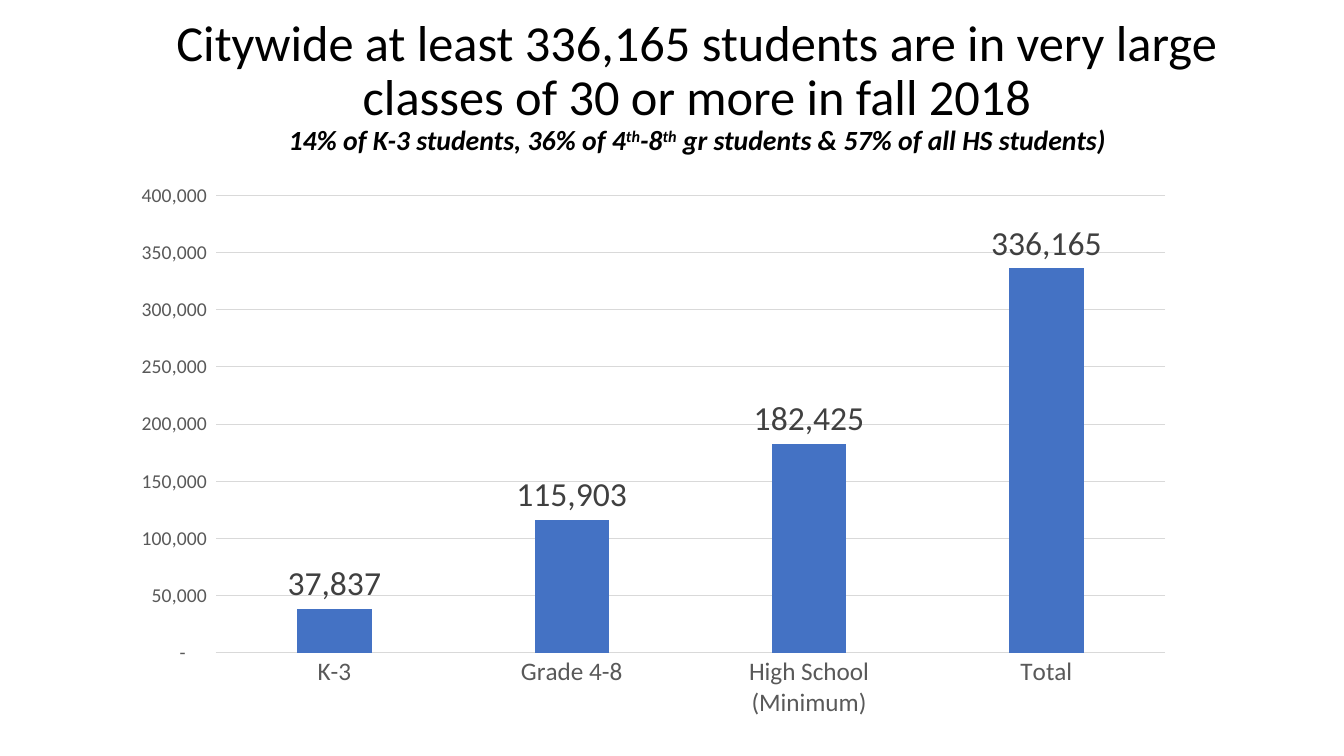
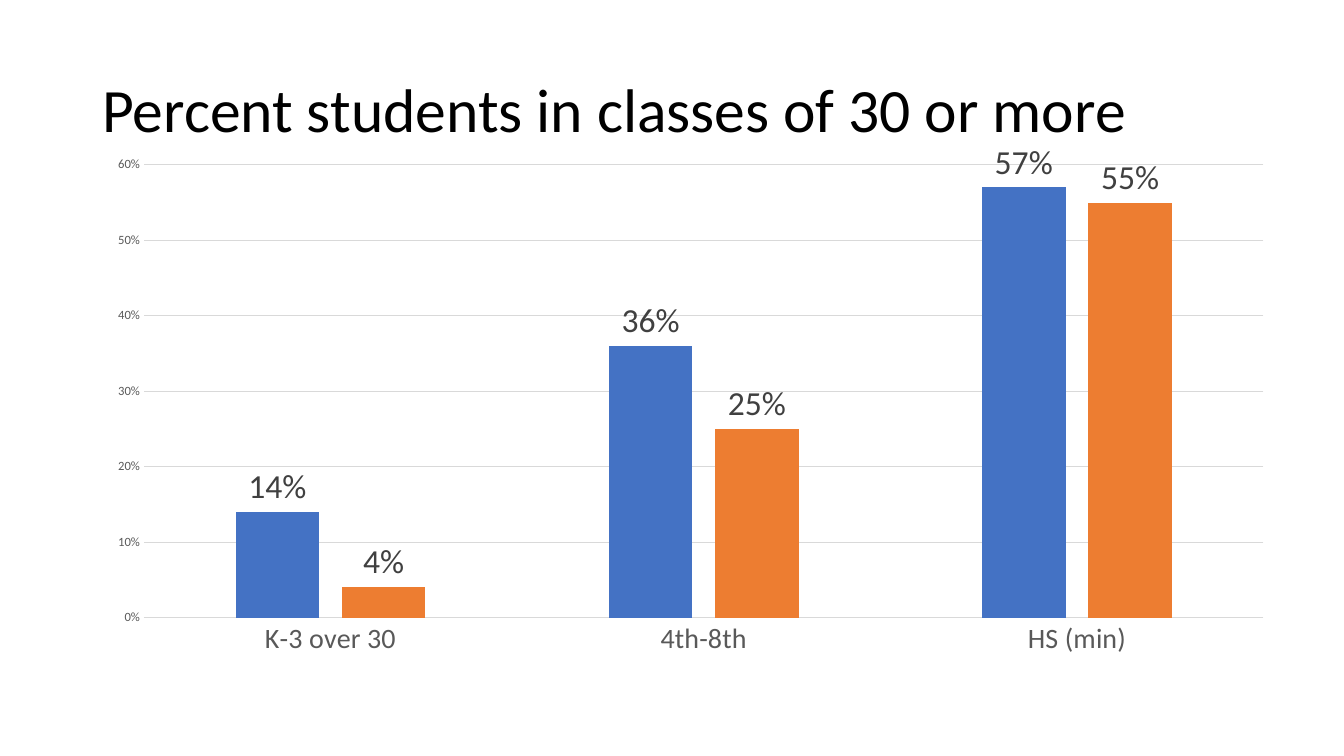
"""Build two slides of column charts about students in large classes."""
from dataclasses import dataclass

from lxml import etree
from pptx import Presentation
from pptx import util as u
from pptx.chart.data import CategoryChartData
from pptx.dml.color import RGBColor
from pptx.enum import chart as ch
from pptx.enum import text
from pptx.oxml.ns import qn

PX = 9525
FONT = "Calibri"
COLORS = {
    "title": "000000",
    "axis": "595959",
    "label": "404040",
    "grid": "D9D9D9",
    "blue": "4472C4",
    "orange": "ED7D31",
}
COUNT = '_(* #,##0_);_(* \\(#,##0\\);_(* "-"??_);_('
PERCENT = "0%"
LABEL_SIZE = 24


@dataclass(frozen=True)
class Box:
    left: int
    top: int
    width: int
    height: int

    def emu(self) -> tuple[int, ...]:
        return tuple(n * PX for n in (self.left, self.top, self.width, self.height))


@dataclass(frozen=True)
class Span:
    text: str
    size: float
    strong: bool = False
    raised: bool = False


@dataclass(frozen=True)
class Title:
    box: Box
    align: text.PP_ALIGN
    lines: list[list[Span]]


@dataclass(frozen=True)
class Series:
    color: str
    values: list[float]


@dataclass(frozen=True)
class Columns:
    box: Box
    plot: tuple[float, float, float, float]
    categories: list[str]
    series: list[Series]
    number_format: str
    top_value: float
    step: float
    category_size: int
    value_size: int


def rgb(name: str) -> RGBColor:
    return RGBColor.from_string(COLORS[name])


def style_font(font, size: float, color: str) -> None:
    font.name = FONT
    font.size = u.Pt(size)
    font.color.rgb = rgb(color)


def style_line(line) -> None:
    line.color.rgb = rgb("grid")
    line.width = u.Pt(0.75)


def add_title(page, title: Title) -> None:
    frame = page.shapes.add_textbox(*title.box.emu()).text_frame
    frame.word_wrap = True
    frame.vertical_anchor = text.MSO_ANCHOR.MIDDLE
    para = frame.paragraphs[0]
    para.alignment = title.align
    para.line_spacing = 0.9
    for number, line in enumerate(title.lines):
        if number:
            para.add_line_break()
        for span in line:
            run = para.add_run()
            run.text = span.text
            style_font(run.font, span.size, "title")
            run.font.bold = run.font.italic = span.strong
            if span.raised:
                run._r.get_or_add_rPr().set("baseline", "30000")


def place_plot(chart, fractions: tuple[float, float, float, float]) -> None:
    area = chart._chartSpace.chart.plotArea
    for old in area.findall(qn("c:layout")):
        area.remove(old)
    layout = etree.Element(qn("c:layout"))
    manual = etree.SubElement(layout, qn("c:manualLayout"))
    settings = [("layoutTarget", "inner"), ("xMode", "edge"), ("yMode", "edge")]
    settings += zip("xywh", map(str, fractions))
    for tag, value in settings:
        etree.SubElement(manual, qn(f"c:{tag}")).set("val", value)
    area.insert(0, layout)


def add_columns(page, columns: Columns) -> None:
    data = CategoryChartData(number_format=columns.number_format)
    data.categories = columns.categories
    for series in columns.series:
        data.add_series("", series.values)
    chart = page.shapes.add_chart(
        ch.XL_CHART_TYPE.COLUMN_CLUSTERED, *columns.box.emu(), data
    ).chart
    chart.has_title = False
    chart.has_legend = False
    style_font(chart.font, 10, "title")
    place_plot(chart, columns.plot)

    categories, values = chart.category_axis, chart.value_axis
    for axis, size in (
        (categories, columns.category_size),
        (values, columns.value_size),
    ):
        axis.major_tick_mark = axis.minor_tick_mark = ch.XL_TICK_MARK.NONE
        style_font(axis.tick_labels.font, size, "axis")
    style_line(categories.format.line)
    values.format.line.fill.background()
    values.has_major_gridlines = True
    style_line(values.major_gridlines.format.line)
    values.minimum_scale = 0
    values.maximum_scale = columns.top_value
    values.major_unit = columns.step
    values.tick_labels.number_format = columns.number_format
    values.tick_labels.number_format_is_linked = False

    plot = chart.plots[0]
    plot.vary_by_categories = False
    plot.gap_width = 219
    plot.overlap = -27
    for bars, series in zip(plot.series, columns.series):
        bars.format.fill.solid()
        bars.format.fill.fore_color.rgb = rgb(series.color)
        labels = bars.data_labels
        labels.show_value = True
        labels.position = ch.XL_LABEL_POSITION.OUTSIDE_END
        labels.number_format = columns.number_format
        labels.number_format_is_linked = False
        style_font(labels.font, LABEL_SIZE, "label")


SLIDES = [
    (
        Title(
            Box(112, 8, 1104, 150),
            text.PP_ALIGN.CENTER,
            [
                [Span("Citywide at least 336,165 students are in very large "
                      "classes of 30 or more in fall 2018", 36)],
                [
                    Span("14% of K-3 students, 36% of 4", 19.8, True),
                    Span("th", 19.8, True, True),
                    Span("-8", 19.8, True),
                    Span("th", 19.8, True, True),
                    Span(" gr students & 57% of all HS students)", 19.8, True),
                ],
            ],
        ),
        Columns(
            box=Box(114, 165, 1016, 531),
            plot=(0.09, 0.04, 0.89, 0.82),
            categories=["K-3", "Grade 4-8", "High School (Minimum)", "Total"],
            series=[Series("blue", [37837, 115903, 182425, 336165])],
            number_format=COUNT,
            top_value=400000,
            step=50000,
            category_size=18,
            value_size=14,
        ),
    ),
    (
        Title(
            Box(88, 38, 1104, 139),
            text.PP_ALIGN.LEFT,
            [[Span("Percent students in classes of 30 or more", 44)]],
        ),
        Columns(
            box=Box(56, 57, 1159, 625),
            plot=(0.07, 0.16, 0.92, 0.69),
            categories=["K-3 over 30", "4th-8th", "HS (min)"],
            series=[
                Series("blue", [0.14, 0.36, 0.57]),
                Series("orange", [0.04, 0.25, 0.55]),
            ],
            number_format=PERCENT,
            top_value=0.6,
            step=0.1,
            category_size=20,
            value_size=9,
        ),
    ),
]


def main() -> None:
    deck = Presentation()
    deck.slide_width, deck.slide_height = 1280 * PX, 720 * PX
    for title, columns in SLIDES:
        page = deck.slides.add_slide(deck.slide_layouts[6])
        add_title(page, title)
        add_columns(page, columns)
    deck.save("out.pptx")


if __name__ == "__main__":
    main()
